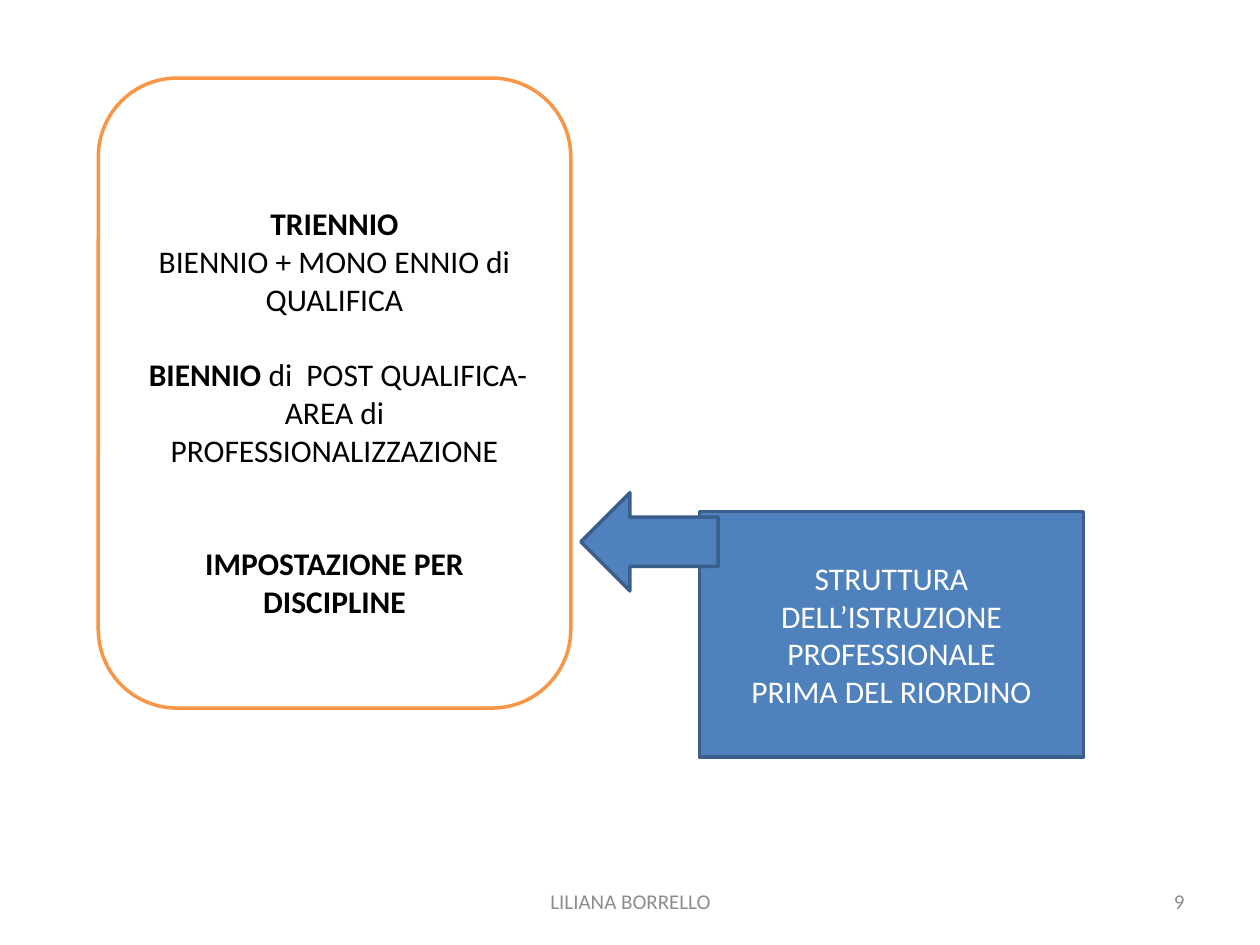
import pptx
import pptx.util
import pptx.dml.color
import pptx.enum.shapes
import pptx.enum.text

Inches, Pt = pptx.util.Inches, pptx.util.Pt
SHAPE = pptx.enum.shapes.MSO_SHAPE
ALIGN = pptx.enum.text.PP_ALIGN

COLORS = {"white": "FFFFFF", "black": "000000", "orange": "F79646",
          "blue": "4F81BD", "navy": "3A5F8C", "gray": "8C8C8C"}
FONT = "Calibri"
LINE_GAP = 21.6  # height of one 18 pt line, in points

# Content: each paragraph is (lines of space before, [(text, bold), ...])
OLD_STRUCTURE = [
    (0, [("TRIENNIO", True)]),
    (0, [("BIENNIO + MONO ENNIO di QUALIFICA", False)]),
    (1, [(" BIENNIO ", True), ("di  POST QUALIFICA-", False)]),
    (0, [("AREA di PROFESSIONALIZZAZIONE", False)]),
    (2, [("IMPOSTAZIONE PER DISCIPLINE", True)]),
]
CAPTION = [
    (0, [("STRUTTURA DELL’ISTRUZIONE PROFESSIONALE", False)]),
    (0, [("PRIMA DEL RIORDINO", False)]),
]
# Footer: text, box, alignment
FOOTERS = [
    ("LILIANA BORRELLO", (3.42, 6.95, 3.17, 0.4), ALIGN.CENTER),
    ("9", (7.17, 6.95, 2.33, 0.4), ALIGN.RIGHT),
]


def rgb(name):
    return pptx.dml.color.RGBColor.from_string(COLORS[name])


def add_box(slide, kind, box, fill, line):
    shape = slide.shapes.add_shape(kind, *map(Inches, box))
    shape.shadow.inherit = False
    shape.fill.solid()
    shape.fill.fore_color.rgb = rgb(fill)
    shape.line.color.rgb = rgb(line)
    shape.line.width = Pt(2)
    return shape


def write(shape, paragraphs, size, color, alignment=ALIGN.CENTER):
    frame = shape.text_frame
    frame.word_wrap = True
    frame.vertical_anchor = pptx.enum.text.MSO_ANCHOR.MIDDLE
    for index, (gap, runs) in enumerate(paragraphs):
        paragraph = frame.add_paragraph() if index else frame.paragraphs[0]
        paragraph.alignment = alignment
        paragraph.space_before = Pt(gap * LINE_GAP)
        for text, bold in runs:
            run = paragraph.add_run()
            run.text = text
            run.font.name = FONT
            run.font.size = Pt(size)
            run.font.bold = bold
            run.font.color.rgb = rgb(color)


def main():
    presentation = pptx.Presentation()
    presentation.slide_width, presentation.slide_height = Inches(10), Inches(7.5)
    slide = presentation.slides.add_slide(presentation.slide_layouts[6])

    # Rounded panel, its text set one line lower than the middle
    panel = add_box(slide, SHAPE.ROUNDED_RECTANGLE, (0.78, 0.62, 3.75, 5), "white", "orange")
    write(panel, OLD_STRUCTURE, 18, "black")
    panel.text_frame.margin_top = Inches(0.35)

    # Caption block
    caption = add_box(slide, SHAPE.RECTANGLE, (5.55, 4.06, 3.05, 1.95), "blue", "navy")
    write(caption, CAPTION, 18, "white")

    # Footer and slide number
    for text, box, alignment in FOOTERS:
        footer = slide.shapes.add_textbox(*map(Inches, box))
        write(footer, [(0, [(text, False)])], 12, "gray", alignment)

    # Arrow from the caption to the panel
    add_box(slide, SHAPE.LEFT_ARROW, (4.61, 3.91, 1.09, 0.78), "blue", "navy")

    presentation.save("out.pptx")


if __name__ == "__main__":
    main()
